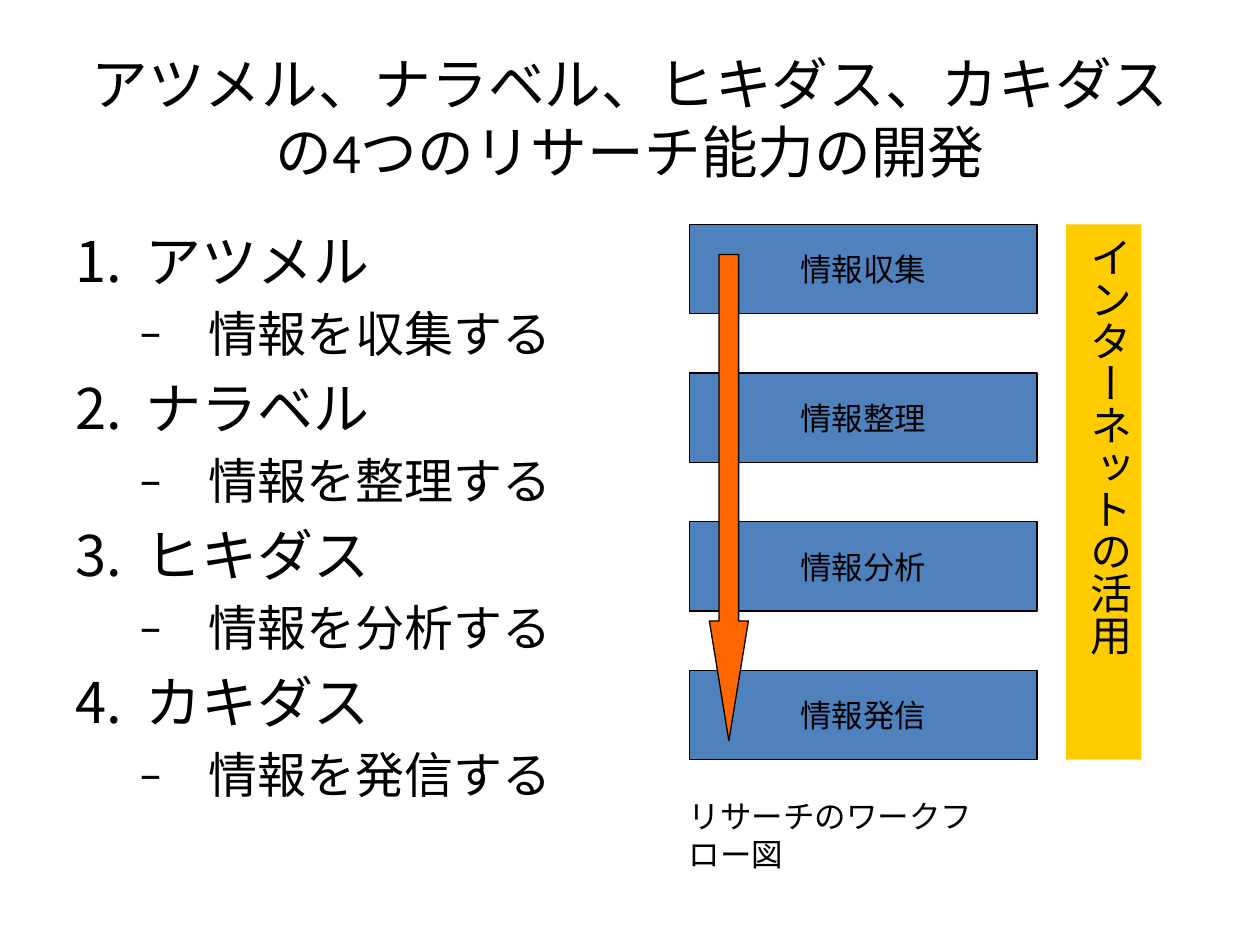
from lxml.etree import SubElement
from pptx import Presentation
from pptx.dml.color import RGBColor
from pptx.enum.shapes import MSO_SHAPE
from pptx.enum.text import MSO_ANCHOR, PP_ALIGN
from pptx.oxml.ns import qn
from pptx.util import Inches, Pt

FONT = "Calibri"
COLORS = {"text": "000000", "box": "4F81BD", "arrow": "FF6600", "band": "FFCC00"}
SKILLS = [
    ("アツメル", "情報を収集する"),
    ("ナラベル", "情報を整理する"),
    ("ヒキダス", "情報を分析する"),
    ("カキダス", "情報を発信する"),
]
STEPS = ["情報収集", "情報整理", "情報分析", "情報発信"]


def color(name):
    """Return the named colour."""
    return RGBColor.from_string(COLORS[name])


def add_run(p, text, size):
    """Add one run in the slide's font."""
    r = p.add_run()
    r.text = text
    r.font.name = FONT
    r.font.size = Pt(size)
    r.font.color.rgb = color("text")


def add_text_box(s, x, y, w, h):
    """Add a wrapping text box and return its text frame."""
    tf = s.shapes.add_textbox(Inches(x), Inches(y), Inches(w), Inches(h)).text_frame
    tf.word_wrap = True
    return tf


def add_block(s, kind, x, y, w, h, fill, outlined=True):
    """Add a flat filled shape."""
    sp = s.shapes.add_shape(kind, Inches(x), Inches(y), Inches(w), Inches(h))
    sp.shadow.inherit = False
    sp.fill.solid()
    sp.fill.fore_color.rgb = color(fill)
    if outlined:
        sp.line.color.rgb = color("text")
        sp.line.width = Pt(0.75)
    else:
        sp.line.fill.background()
    return sp


def add_title(s, x, y, w, h):
    """Place the two-line title."""
    tf = add_text_box(s, x, y, w, h)
    tf.vertical_anchor = MSO_ANCHOR.MIDDLE
    p = tf.paragraphs[0]
    p.alignment = PP_ALIGN.CENTER
    add_run(p, "アツメル、ナラベル、ヒキダス、カキダス", 32.4)
    p.add_line_break()
    add_run(p, "の4つのリサーチ能力の開発", 32.4)


def add_item(p, text, level, size, bullet, **attrs):
    """Fill a list paragraph with a hanging bullet."""
    p.level = level
    p.space_before = Pt(size * 0.2)
    pPr = p._p.get_or_add_pPr()
    pPr.set("marL", str(Inches(0.56 + 0.5 * level)))
    pPr.set("indent", str(Inches(-0.56)))
    SubElement(pPr, qn("a:buFont"), typeface=FONT)
    SubElement(pPr, qn(bullet), **attrs)
    add_run(p, text, size)


def add_skills(s, x, y, w, h):
    """Place the numbered skills, each with its explanation."""
    tf = add_text_box(s, x, y, w, h)
    for i, (skill, detail) in enumerate(SKILLS):
        p = tf.add_paragraph() if i else tf.paragraphs[0]
        add_item(p, skill, 0, 32, "a:buAutoNum", type="arabicPeriod")
        add_item(tf.add_paragraph(), detail, 1, 28, "a:buChar", char="–")


def add_workflow(s, x, y, w, h):
    """Place the step boxes, the arrow over them and the caption below."""
    box_h = 0.71
    pitch = (h - box_h) / (len(STEPS) - 1)
    for i, step in enumerate(STEPS):
        sp = add_block(s, MSO_SHAPE.RECTANGLE, x, y + i * pitch, w, box_h, "box")
        tf = sp.text_frame
        tf.word_wrap = False
        tf.vertical_anchor = MSO_ANCHOR.MIDDLE
        tf.paragraphs[0].alignment = PP_ALIGN.CENTER
        add_run(tf.paragraphs[0], step, 18)
    arrow = add_block(s, MSO_SHAPE.DOWN_ARROW, x + 0.16, y + 0.24, 0.31, 3.86, "arrow")
    arrow.adjustments[0] = 0.5
    arrow.adjustments[1] = 3.07
    tf = add_text_box(s, x - 0.1, y + h + 0.25, 2.94, 0.4)
    add_run(tf.paragraphs[0], "リサーチのワークフロー図", 18)


def add_band(s, x, y, w, h):
    """Place the band with vertical text."""
    sp = add_block(s, MSO_SHAPE.RECTANGLE, x, y, w, h, "band", outlined=False)
    tf = sp.text_frame
    tf.word_wrap = True
    tf.vertical_anchor = MSO_ANCHOR.TOP
    tf._txBody.bodyPr.set("vert", "eaVert")
    p = tf.paragraphs[0]
    p.alignment = PP_ALIGN.LEFT
    add_run(p, "インターネットの活用", 24)


def main():
    """Build and save the slide."""
    prs = Presentation()
    prs.slide_width, prs.slide_height = Inches(10), Inches(7.5)
    s = prs.slides.add_slide(prs.slide_layouts[6])
    add_title(s, 0.5, 0.3, 9, 1.25)
    add_skills(s, 0.5, 1.75, 4.58, 4.95)
    add_workflow(s, 5.47, 1.78, 2.76, 4.25)
    add_band(s, 8.46, 1.78, 0.6, 4.25)
    prs.save("out.pptx")


if __name__ == "__main__":
    main()
